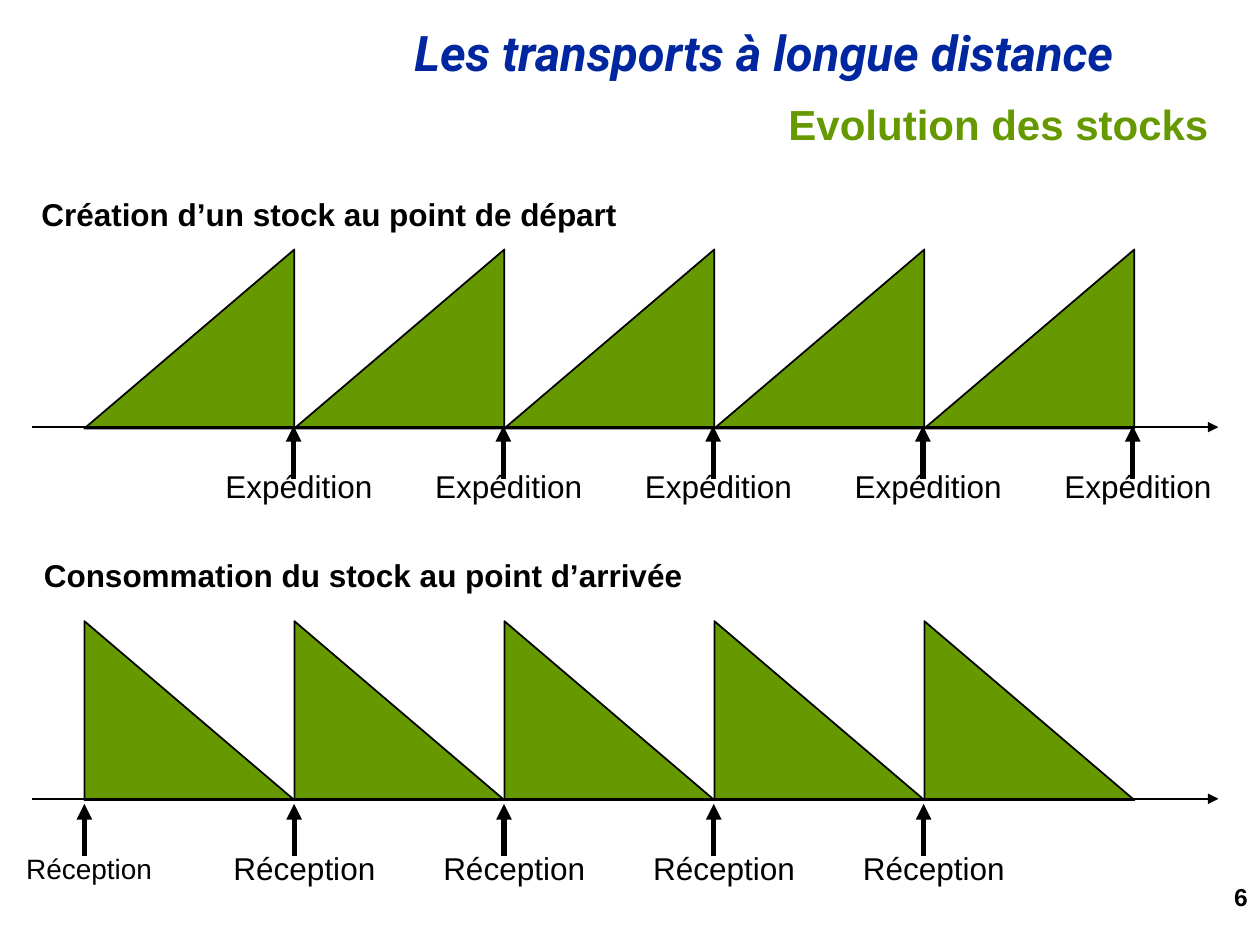
from lxml import etree
from pptx import Presentation
from pptx.dml.color import RGBColor
from pptx.enum import shapes, text
from pptx.oxml.ns import qn
from pptx.util import Inches, Pt

COLORS = {"black": "000000", "green": "669900", "blue": "00279F"}
CYCLES = 5
PERIOD = 5 / 3
ARROW_STEP = 1.665


def color(name):
    return RGBColor.from_string(COLORS[name])


def add_text(s, box, content, size, name="black", font="Arial", bold=False,
             italic=False, align=text.PP_ALIGN.LEFT, wrap=True,
             anchor=text.MSO_ANCHOR.TOP):
    tf = s.shapes.add_textbox(*map(Inches, box)).text_frame
    tf.word_wrap = wrap
    tf.vertical_anchor = anchor
    p = tf.paragraphs[0]
    p.alignment = align
    p.line_spacing = 0.9
    r = p.add_run()
    r.text = content
    r.font.name, r.font.size = font, Pt(size)
    r.font.bold, r.font.italic = bold, italic
    r.font.color.rgb = color(name)


def add_arrow(parent, start, end, width):
    line = parent.shapes.add_connector(
        shapes.MSO_CONNECTOR.STRAIGHT, *map(Inches, (*start, *end)))
    line.line.color.rgb = color("black")
    line.line.width = Pt(width)
    etree.SubElement(line.line._get_or_add_ln(), qn("a:tailEnd"), type="triangle")
    etree.SubElement(line._element.spPr, qn("a:effectLst"))


def add_triangle(s, box, rising):
    sp = s.shapes.add_shape(shapes.MSO_SHAPE.RIGHT_TRIANGLE, *map(Inches, box))
    sp.shadow.inherit = False
    sp.fill.solid()
    sp.fill.fore_color.rgb = color("green")
    sp.line.color.rgb = color("black")
    sp.line.width = Pt(1)
    if rising:
        sp._element.spPr.get_or_add_xfrm().set("flipH", "1")


def add_header(s, left, top):
    add_text(s, (left + 1.42, top, 6.81, 0.52), "Les transports à longue distance",
             28, "blue", "Roboto", bold=True, italic=True)
    add_text(s, (left, top + 0.58, 7.92, 0.5), "Evolution des stocks", 24, "green",
             bold=True, align=text.PP_ALIGN.RIGHT, anchor=text.MSO_ANCHOR.MIDDLE)


def add_stock_chart(s, box, rising, arrow_x, arrow_y, labels):
    """Sawtooth of stock over time, with an arrow and a label for each event.

    labels: one (wording, size, left offset from its arrow, y, width, height)
    for each arrow; all y values count from the top of the box.
    """
    left, top, width, height = box
    for i in range(CYCLES):
        add_triangle(s, (left + 0.42 + i * PERIOD, top, PERIOD, height), rising)
    axis_y = top + height - 0.01
    add_arrow(s, (left, axis_y), (left + width, axis_y), 1)

    arrows = s.shapes.add_group_shape()
    tip, foot = arrow_y
    for i, (wording, size, dx, y, w, h) in enumerate(labels):
        x = left + arrow_x + i * ARROW_STEP
        add_arrow(arrows, (x, top + foot), (x, top + tip), 3)
        add_text(s, (x + dx, top + y, w, h), wording, size, wrap=False)


def main():
    prs = Presentation()
    prs.slide_width, prs.slide_height = Inches(10), Inches(7.5)
    s = prs.slides.add_slide(prs.slide_layouts[6])

    add_header(s, 1.77, 0.18)

    shipping = [("Expédition", 18, -0.64, 1.71, 1.37, 0.37)] * CYCLES
    add_text(s, (0.23, 1.53, 4.77, 0.37), "Création d’un stock au point de départ",
             18, bold=True, wrap=False)
    add_stock_chart(s, (0.25, 1.98, 9.42, 1.42), True, 2.08, (1.4, 1.82), shipping)

    receipts = [("Réception", 16, -0.56, 1.81, 1.2, 0.34)]
    receipts += [("Réception", 18, -0.58, 1.79, 1.33, 0.37)] * (CYCLES - 1)
    add_text(s, (0.25, 4.4, 5.27, 0.37), "Consommation du stock au point d’arrivée",
             18, bold=True, wrap=False)
    add_stock_chart(s, (0.25, 4.93, 9.42, 1.42), False, 0.42, (1.45, 1.86), receipts)

    add_text(s, (7.75, 6.98, 2.25, 0.4), "6", 14, bold=True,
             align=text.PP_ALIGN.RIGHT)
    prs.save("out.pptx")


if __name__ == "__main__":
    main()
